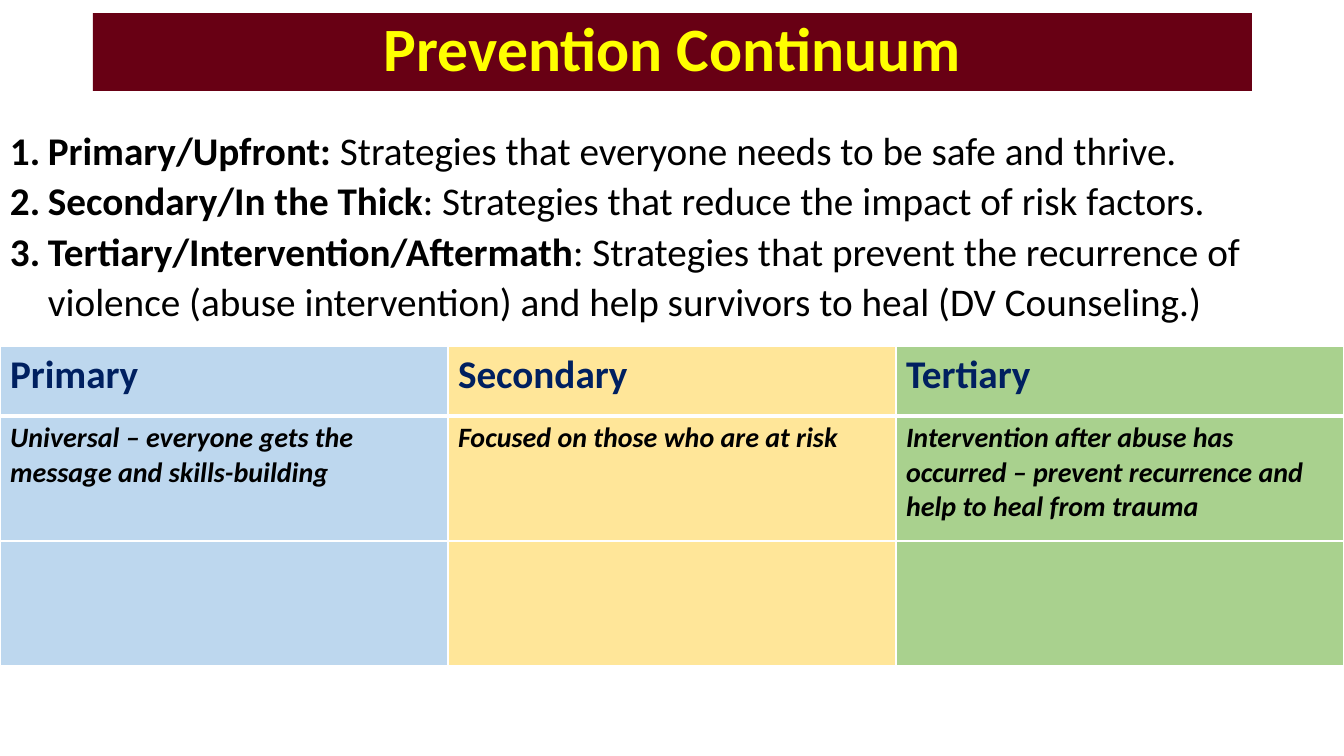
from lxml.etree import SubElement
from pptx import Presentation
from pptx.dml.color import RGBColor
from pptx.enum.text import MSO_ANCHOR, MSO_AUTO_SIZE, PP_ALIGN
from pptx.oxml import parse_xml
from pptx.oxml.ns import nsdecls, qn
from pptx.util import Pt

PX = 914400 / 100.8
WIDTH, HEIGHT = 1344, 756
COLORS = {
    "maroon": "680014",
    "yellow": "FFFF00",
    "black": "000000",
    "navy": "002060",
    "white": "FFFFFF",
    "blue": "BDD7EE",
    "gold": "FFE699",
    "green": "A9D18E",
}
LEVELS = [
    ("Primary/Upfront: ", "Strategies that everyone needs to be safe and thrive."),
    ("Secondary/In the Thick", ": Strategies that reduce the impact of risk factors."),
    ("Tertiary/Intervention/Aftermath",
     ": Strategies that prevent the recurrence of violence (abuse intervention) "
     "and help survivors to heal (DV Counseling.)"),
]
HEADS = ["Primary", "Secondary", "Tertiary"]
NOTES = [
    "Universal – everyone gets the message and skills-building",
    "Focused on those who are at risk",
    "Intervention after abuse has occurred – prevent recurrence and help to heal from trauma",
]


def px(count):
    return round(count * PX)


def color(name):
    return RGBColor.from_string(COLORS[name])


def write(para, text, size=28, ink="black", bold=True, italic=False):
    run = para.add_run()
    run.text = text
    font = run.font
    font.name = "Calibri"
    font.size = Pt(size)
    font.bold = bold
    font.italic = italic
    font.color.rgb = color(ink)


class Board:
    def __init__(self):
        self.deck = Presentation()
        self.deck.slide_width = px(WIDTH)
        self.deck.slide_height = px(HEIGHT)
        self.slide = self.deck.slides.add_slide(self.deck.slide_layouts.get_by_name("Title Only"))

    def title(self, text, left, top, width, height):
        shape = self.slide.shapes.title
        shape.left, shape.top = px(left), px(top)
        shape.width, shape.height = px(width), px(height)
        shape.fill.solid()
        shape.fill.fore_color.rgb = color("maroon")
        frame = shape.text_frame
        frame.auto_size = MSO_AUTO_SIZE.NONE
        frame.vertical_anchor = MSO_ANCHOR.MIDDLE
        para = frame.paragraphs[0]
        para.alignment = PP_ALIGN.CENTER
        para.line_spacing = 0.9
        write(para, text, size=44, ink="yellow")

    def numbers(self, items, left, top, width, height):
        box = self.slide.shapes.add_textbox(px(left), px(top), px(width), px(height))
        frame = box.text_frame
        frame.word_wrap = True
        for index, (term, rest) in enumerate(items):
            para = frame.add_paragraph() if index else frame.paragraphs[0]
            para.line_spacing = 1.07
            para.space_after = Pt(8 if index == len(items) - 1 else 0)
            props = para._p.get_or_add_pPr()
            props.set("marL", str(px(38)))
            props.set("indent", str(px(-38)))
            SubElement(props, qn("a:buFont"), typeface="Calibri")
            SubElement(props, qn("a:buAutoNum"), type="arabicPeriod")
            write(para, term)
            write(para, rest, bold=False)

    def grid(self, fills, rows, left, top, width, heights):
        frame = self.slide.shapes.add_table(
            len(heights), len(fills), px(left), px(top), px(width), px(sum(heights)))
        table = frame.table
        table.first_row = table.horz_banding = False
        for col in table.columns:
            col.width = px(width / len(fills))
        for index, height in enumerate(heights):
            table.rows[index].height = px(height)
            for spot, fill in enumerate(fills):
                cell = table.cell(index, spot)
                cell.fill.solid()
                cell.fill.fore_color.rgb = color(fill)
                self.edges(cell, over=3 if index == 1 else 1, under=3 if index == 0 else 1)
        for index, (texts, style) in enumerate(rows):
            for spot, text in enumerate(texts):
                write(table.cell(index, spot).text_frame.paragraphs[0], text, **style)

    def edges(self, cell, over, under):
        props = cell._tc.get_or_add_tcPr()
        sides = [("L", 1), ("R", 1), ("T", over), ("B", under)]
        for place, (side, weight) in enumerate(sides):
            props.insert(place, parse_xml(
                f'<a:ln{side} {nsdecls("a")} w="{Pt(weight)}"><a:solidFill>'
                f'<a:srgbClr val="{COLORS["white"]}"/></a:solidFill></a:ln{side}>'))


def main():
    board = Board()
    board.title("Prevention Continuum", 93, 13, 1159, 78)
    board.numbers(LEVELS, 0, 118, 1338, 307)
    rows = [(HEADS, {"ink": "navy"}), (NOTES, {"size": 20, "italic": True})]
    board.grid(["blue", "gold", "green"], rows, 0, 346, WIDTH, [70, 125, 125])
    board.deck.save("out.pptx")


if __name__ == "__main__":
    main()
